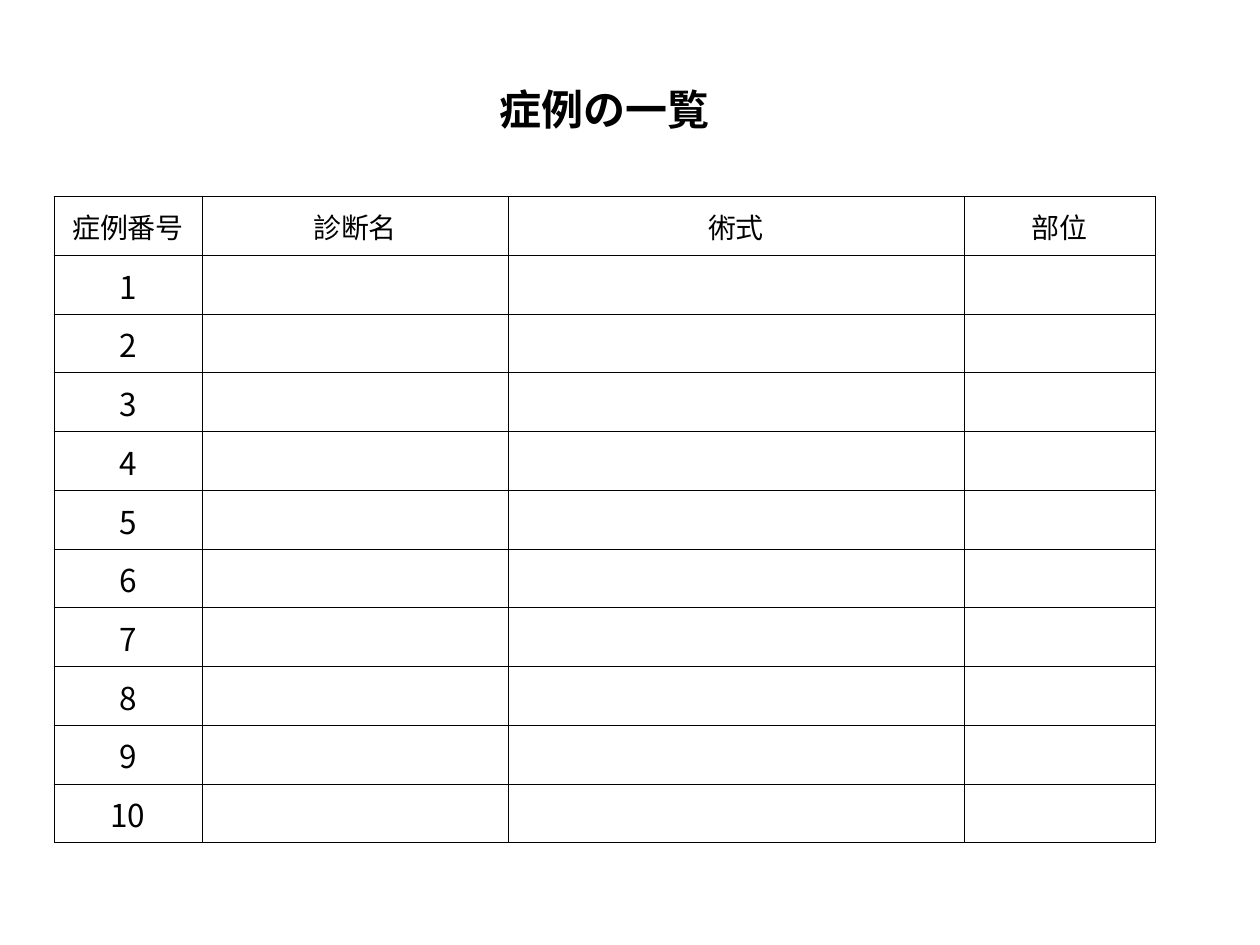
from lxml.etree import SubElement
from pptx import Presentation
from pptx.dml.color import RGBColor
from pptx.enum.text import MSO_ANCHOR, PP_ALIGN
from pptx.oxml.ns import qn
from pptx.util import Pt

PX = 914400 / 126
FONT = "Noto Sans CJK JP"
COLORS = {"ink": "000000", "paper": "FFFFFF"}
COLUMN_WIDTHS = [148, 306, 456, 191]
HEADINGS = ["症例番号", "診断名", "術式", "部位"]
CASE_COUNT = 10
HEADING_ROW = 2
ROW_COUNT = HEADING_ROW + 1 + CASE_COUNT


def px(length):
    return round(length * PX)


def set_borders(cell, drawn_sides):
    properties = cell._tc.get_or_add_tcPr()
    for side in "LRTB":
        border = SubElement(properties, qn(f"a:ln{side}"), w=str(Pt(0.5)))
        if side in drawn_sides:
            fill = SubElement(border, qn("a:solidFill"))
            SubElement(fill, qn("a:srgbClr"), val=COLORS["ink"])
        else:
            SubElement(border, qn("a:noFill"))


def style_cell(cell, drawn_sides):
    set_borders(cell, drawn_sides)
    cell.fill.solid()
    cell.fill.fore_color.rgb = RGBColor.from_string(COLORS["paper"])
    cell.vertical_anchor = MSO_ANCHOR.MIDDLE
    cell.margin_left = cell.margin_right = cell.margin_top = px(1)
    cell.margin_bottom = 0


def write_cell(cell, words, size, bold=False):
    cell.text = words
    paragraph = cell.text_frame.paragraphs[0]
    paragraph.alignment = PP_ALIGN.CENTER
    font = paragraph.font
    font.size = Pt(size)
    font.bold = bold
    font.color.rgb = RGBColor.from_string(COLORS["ink"])
    font.name = FONT
    SubElement(font._element, qn("a:ea"), typeface=FONT)


def add_case_table(slide):
    frame = slide.shapes.add_table(
        ROW_COUNT, len(HEADINGS), px(54), px(76), px(sum(COLUMN_WIDTHS)), px(764)
    )
    cases = frame.table
    cases.first_row = cases.horz_banding = False
    for column, width in zip(cases.columns, COLUMN_WIDTHS):
        column.width = px(width)
    for row_number, row in enumerate(cases.rows):
        if row_number >= HEADING_ROW:
            drawn_sides = "LRTB"
        else:
            drawn_sides = "B" if row_number == HEADING_ROW - 1 else ""
        for cell in row.cells:
            style_cell(cell, drawn_sides)
    return cases


def main():
    """Build the slide that lists the surgical cases."""
    presentation = Presentation()
    presentation.slide_width = px(1260)
    presentation.slide_height = px(945)
    slide = presentation.slides.add_slide(presentation.slide_layouts[6])
    cases = add_case_table(slide)
    cases.cell(0, 0).merge(cases.cell(0, len(HEADINGS) - 1))
    write_cell(cases.cell(0, 0), "症例の一覧", 24, bold=True)
    for column, heading in enumerate(HEADINGS):
        write_cell(cases.cell(HEADING_ROW, column), heading, 16)
    for number in range(1, CASE_COUNT + 1):
        write_cell(cases.cell(HEADING_ROW + number, 0), str(number), 18)
    presentation.save("out.pptx")


if __name__ == "__main__":
    main()
